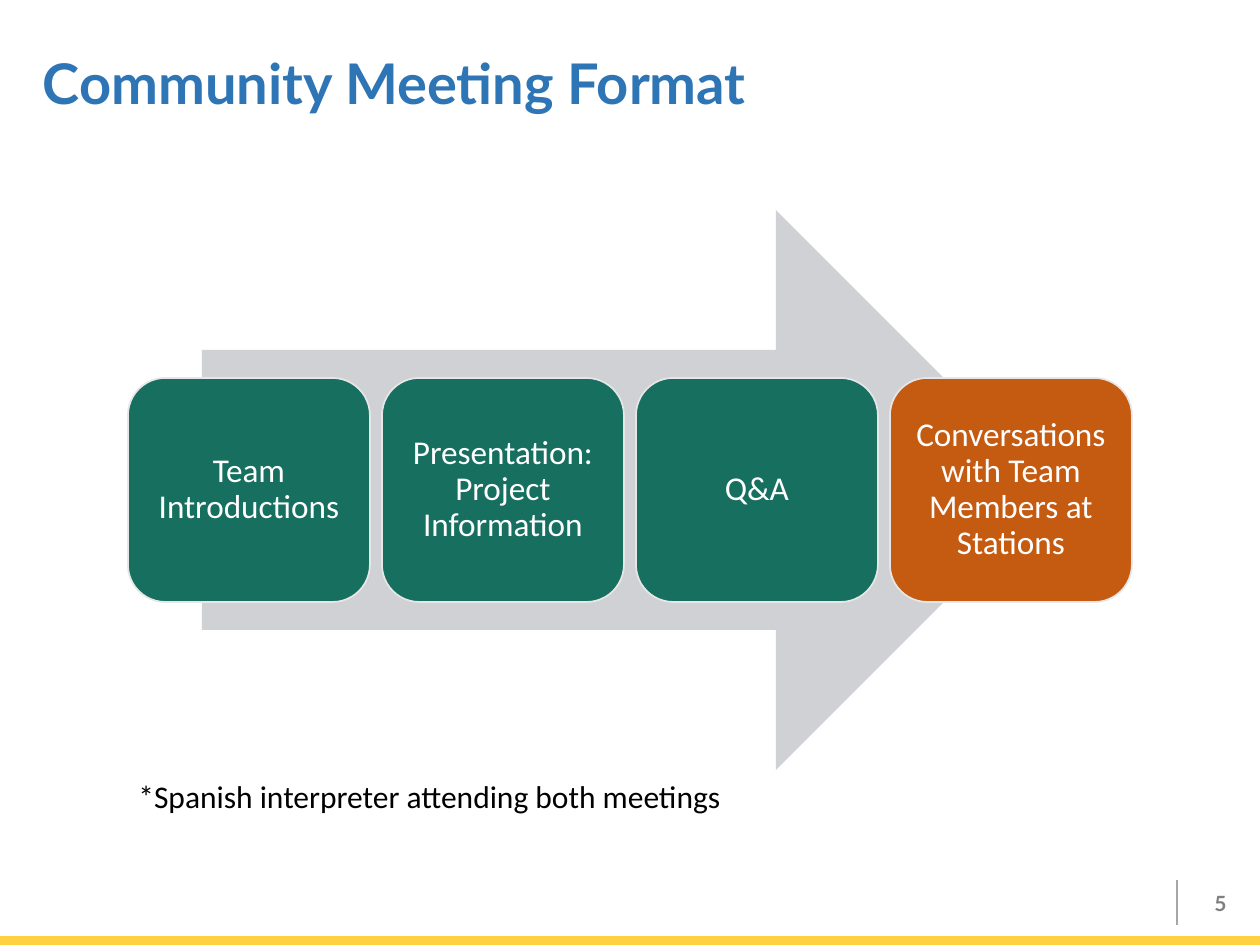
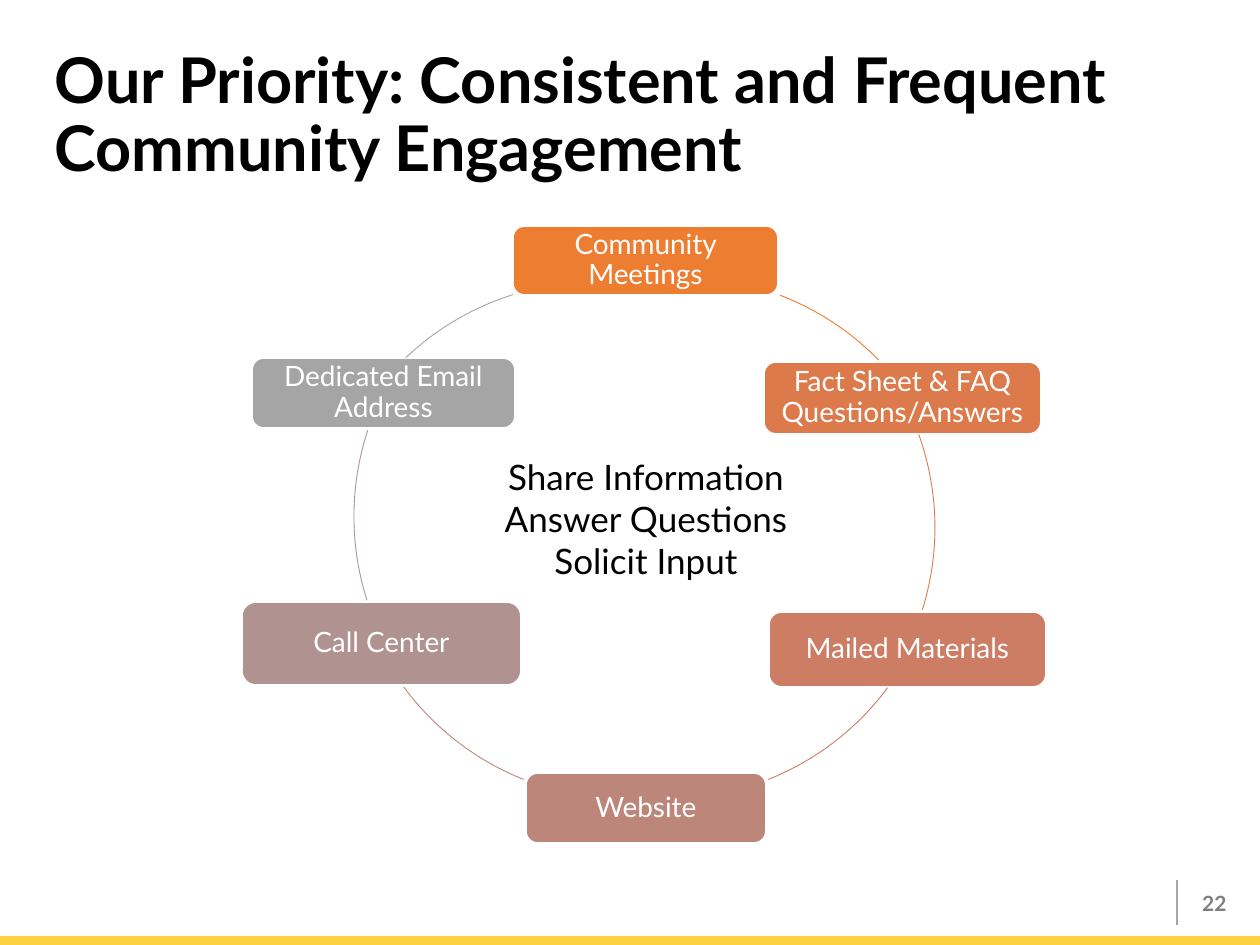
from lxml import etree
from pptx import Presentation, util as u
from pptx.dml.color import RGBColor
from pptx.enum import shapes, text
from pptx.oxml import ns

SCALE = 914400 / 126
COLOURS = {
    "white": "FFFFFF", "black": "000000", "blue": "2E75B6", "grey": "808080",
    "rule": "A6A6A6", "band": "FED141", "arrow": "CFD1D4", "outline": "E7E6E6",
    "step": "176F60", "last step": "C55A11",
    "meetings": "ED7D31", "facts": "DC7A4B", "mail": "CC7D64",
    "website": "BD867B", "calls": "B09391", "email": "A5A5A5",
}
SIDES = ("margin_left", "margin_top", "margin_right", "margin_bottom")
LEFT, CENTRE, RIGHT = text.PP_ALIGN.LEFT, text.PP_ALIGN.CENTER, text.PP_ALIGN.RIGHT
TOP, MIDDLE = text.MSO_ANCHOR.TOP, text.MSO_ANCHOR.MIDDLE

STEPS = [
    ("Team Introductions", "step"),
    ("Presentation: Project Information", "step"),
    ("Q&A", "step"),
    ("Conversations with Team Members at Stations", "last step"),
]
STEP_LEFT, STEP_PITCH = 128, 254

CHANNELS = [
    ("Community Meetings", "meetings", (513, 226, 265, 69)),
    ("Fact Sheet & FAQ Questions/Answers", "facts", (764, 362, 277, 72)),
    ("Mailed Materials", "mail", (769, 612, 277, 75)),
    ("Website", "website", (526, 773, 240, 70)),
    ("Call Center", "calls", (242, 602, 279, 83)),
    ("Dedicated Email Address", "email", (252, 358, 263, 70)),
]
RING_DIAMETER = 551
RING_ARCS = [
    ("meetings", (406, 277), (291, 315.7)),
    ("facts", (384, 252), (340.3, 17.4)),
    ("mail", (391, 248), (36.6, 68.3)),
    ("website", (350, 248), (111.7, 143.6)),
    ("calls", (354, 241), (162.3, 198.2)),
    ("email", (320, 282), (226.5, 252.6)),
]


def px(*lengths):
    return [u.Emu(round(length * SCALE)) for length in lengths]


def rgb(name):
    return RGBColor.from_string(COLOURS[name])


def set_values(target, values):
    for name, value in values.items():
        setattr(target, name, value)


def write(shape, lines, size, colour, font="Lato", bold=False, align=LEFT,
          anchor=TOP, spacing=1.0, inset=None):
    frame = shape.text_frame
    set_values(frame, {"word_wrap": True, "auto_size": text.MSO_AUTO_SIZE.NONE,
                       "vertical_anchor": anchor, "text": "\n".join(lines)})
    if inset is not None:
        set_values(frame, dict.fromkeys(SIDES, px(inset)[0]))
    for paragraph in frame.paragraphs:
        set_values(paragraph, {"alignment": align, "line_spacing": spacing})
        set_values(paragraph.font, {"name": font, "size": u.Pt(size), "bold": bold})
        paragraph.font.color.rgb = rgb(colour)


def add_title(slide, words, box, size, colour):
    title = slide.shapes.title
    set_values(title, dict(zip(("left", "top", "width", "height"), px(*box))))
    write(title, [words], size, colour, bold=True, spacing=0.9)


def add_text(slide, lines, box, size, colour, **style):
    write(slide.shapes.add_textbox(*px(*box)), lines, size, colour, **style)


def add_shape(slide, kind, box, fill=None, line=None, width=1.0):
    shape = slide.shapes.add_shape(kind, *px(*box))
    shape.shadow.inherit = False
    if fill:
        shape.fill.solid()
        shape.fill.fore_color.rgb = rgb(fill)
    else:
        shape.fill.background()
    if line:
        shape.line.color.rgb = rgb(line)
        shape.line.width = u.Pt(width)
    else:
        shape.line.fill.background()
    return shape


def add_label(slide, words, box, fill, line, size, font, inset):
    label = add_shape(slide, shapes.MSO_SHAPE.ROUNDED_RECTANGLE, box, fill, line)
    write(label, [words], size, "white", font=font, align=CENTRE,
          anchor=MIDDLE, spacing=0.9, inset=inset)


def add_arc(slide, colour, corner, angles):
    box = (*corner, RING_DIAMETER, RING_DIAMETER)
    arc = add_shape(slide, shapes.MSO_SHAPE.ARC, box, line=colour, width=0.5)
    for index, degrees in enumerate(angles):
        arc.adjustments[index] = degrees * 0.6


def add_rule(slide, start, end):
    rule = slide.shapes.add_connector(shapes.MSO_CONNECTOR.STRAIGHT, *px(*start, *end))
    rule.line.color.rgb = rgb("rule")
    rule.line.width = u.Pt(1)
    etree.SubElement(rule._element.spPr, ns.qn("a:effectLst"))


def add_slide(presentation, number):
    slide = presentation.slides.add_slide(presentation.slide_layouts[5])
    add_rule(slide, (1177, 880), (1177, 925))
    add_shape(slide, shapes.MSO_SHAPE.RECTANGLE, (0, 936, 1260, 9), "band")
    add_text(slide, [number], (1168, 878, 71, 50), 12, "grey",
             bold=True, align=RIGHT, anchor=MIDDLE)
    return slide


def build_meeting_format(presentation):
    slide = add_slide(presentation, "5")
    add_title(slide, "Community Meeting Format", (30, 50, 1197, 145), 32, "blue")
    add_shape(slide, shapes.MSO_SHAPE.RIGHT_ARROW, (202, 210, 854, 560), "arrow")
    for index, (words, fill) in enumerate(STEPS):
        box = (STEP_LEFT + index * STEP_PITCH, 378, 242, 224)
        add_label(slide, words, box, fill, "outline", 19, "Calibri", 10)
    add_text(slide, ["*Spanish interpreter attending both meetings"],
             (126, 771, 620, 50), 18, "black", font="Calibri")


def build_engagement(presentation):
    slide = add_slide(presentation, "22")
    add_title(slide, "Our Priority: Consistent and Frequent Community Engagement",
              (42, 43, 1140, 147), 36, "black")
    for words, fill, box in CHANNELS:
        add_label(slide, words, box, fill, "white", 16, "Lato", 9)
    for colour, corner, angles in RING_ARCS:
        add_arc(slide, colour, corner, angles)
    add_text(slide, ["Share Information", "Answer Questions", "Solicit Input"],
             (459, 449, 374, 140), 20, "black", align=CENTRE)


def main():
    presentation = Presentation()
    presentation.slide_width, presentation.slide_height = px(1260, 945)
    build_meeting_format(presentation)
    build_engagement(presentation)
    presentation.save("out.pptx")


if __name__ == "__main__":
    main()
